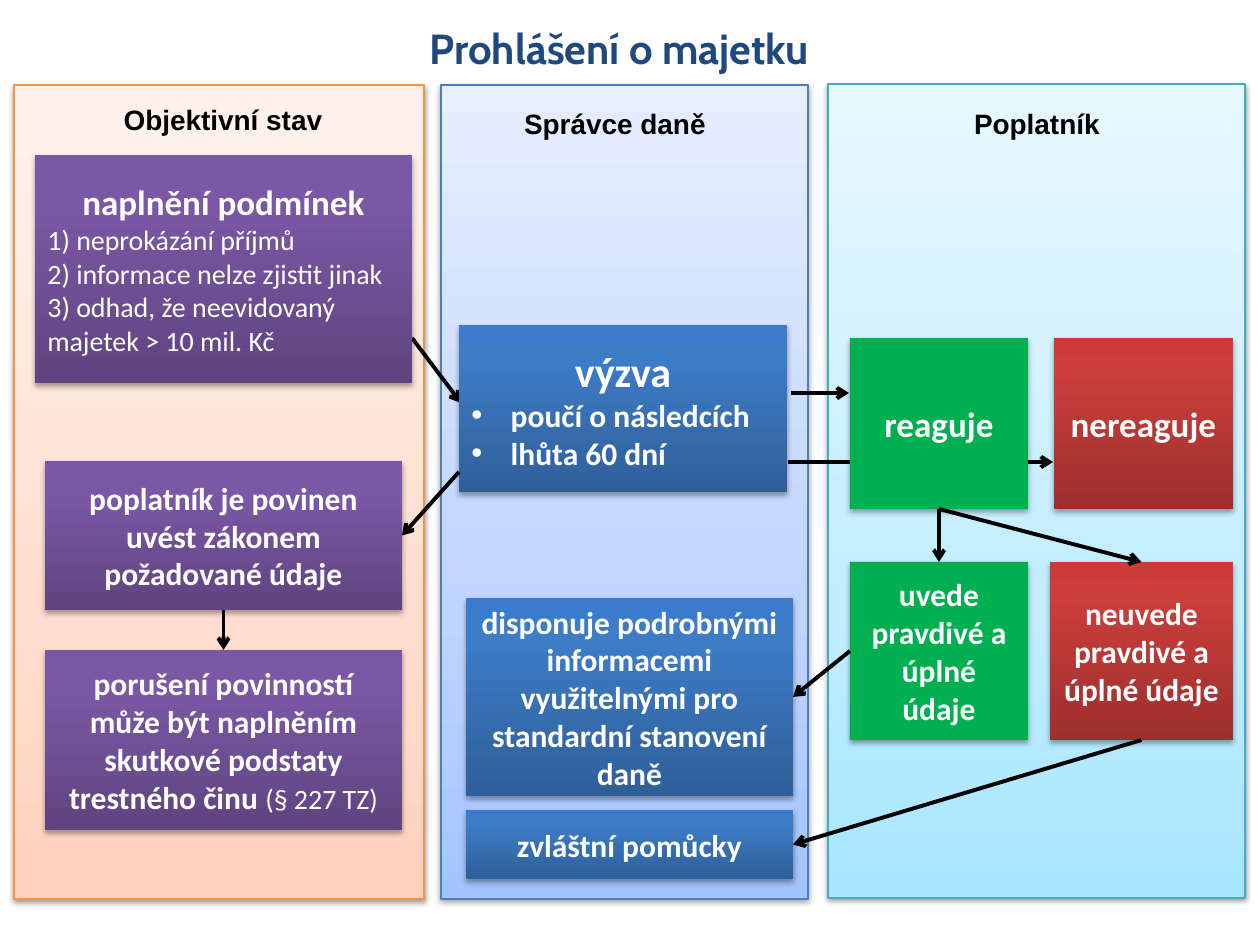
"""Build the slide on the declaration of assets as a three-lane flow chart."""
import lxml.etree
import pptx
import pptx.dml.color
import pptx.enum.shapes
import pptx.enum.text
import pptx.oxml.ns
import pptx.util

RGB = pptx.dml.color.RGBColor
ALIGN = pptx.enum.text.PP_ALIGN
RECT = pptx.enum.shapes.MSO_SHAPE.RECTANGLE
LINE = pptx.enum.shapes.MSO_CONNECTOR.STRAIGHT
qn = pptx.oxml.ns.qn
add = lxml.etree.SubElement
PX = 914400 / 126

BLACK = RGB(0, 0, 0)
WHITE = RGB(255, 255, 255)
NAVY = RGB(0x1F, 0x49, 0x7D)
GREEN = [RGB(0x00, 0xB0, 0x50)]
PURPLE = [RGB(0x5F, 0x44, 0x80), RGB(0x7B, 0x58, 0xA6), RGB(0x7C, 0x57, 0xA8)]
BLUE = [RGB(0x2F, 0x5F, 0x99), RGB(0x3D, 0x7C, 0xC7), RGB(0x3A, 0x7C, 0xCB)]
RED = [RGB(0x9C, 0x2F, 0x2D), RGB(0xCB, 0x3E, 0x3A), RGB(0xCE, 0x3B, 0x37)]
CYAN = [RGB(0xA7, 0xE6, 0xFF), RGB(0xC1, 0xED, 0xFF), RGB(0xE7, 0xF8, 0xFF)]
SKY = [RGB(0xA4, 0xC4, 0xFF), RGB(0xBF, 0xD4, 0xFF), RGB(0xE6, 0xEE, 0xFF)]
PEACH = [RGB(0xFF, 0xD2, 0xBD), RGB(0xFF, 0xDE, 0xD0), RGB(0xFF, 0xF2, 0xED)]
TEAL = RGB(0x46, 0xAA, 0xC5)
STEEL = RGB(0x4B, 0x7E, 0xBC)
ORANGE = RGB(0xF6, 0x92, 0x40)


def write(frame, text, size=18, bold=True, font="Calibri", color=WHITE,
          align=ALIGN.CENTER, bullet=False, join=False):
    para = frame.paragraphs[-1]
    if para.runs and not join:
        para = frame.add_paragraph()
    para.alignment = align
    run = para.add_run()
    run.text = text
    run.font.size = pptx.util.Pt(size)
    run.font.bold = bold
    run.font.name = font
    run.font.color.rgb = color
    if bullet:
        props = para._p.get_or_add_pPr()
        props.set("marL", "285750")
        props.set("indent", "-285750")
        add(props, qn("a:buFont"), typeface="Arial")
        add(props, qn("a:buChar"), char="•")


def block(place, colors, mid=80, edge=None, dist=23000, alpha=35):
    shape = slide.shapes.add_shape(RECT, *[round(n * PX) for n in place])
    fill = shape.fill
    if len(colors) == 1:
        fill.solid()
        fill.fore_color.rgb = colors[0]
    else:
        fill.gradient()
        fill.gradient_angle = 90
        stops = shape._element.spPr.find(".//" + qn("a:gsLst"))
        for stop in list(stops):
            stops.remove(stop)
        for spot, color in zip((0, mid, 100), colors):
            stop = add(stops, qn("a:gs"), pos=str(spot * 1000))
            add(stop, qn("a:srgbClr"), val=str(color))
    if edge:
        shape.line.color.rgb = edge
        shape.line.width = pptx.util.Pt(0.75)
    else:
        shape.line.fill.background()
    shape.shadow.inherit = False
    effect = shape._element.spPr.find(qn("a:effectLst"))
    shade = add(effect, qn("a:outerShdw"), blurRad="40000", dist=str(dist),
                dir="5400000", rotWithShape="0")
    tint = add(shade, qn("a:srgbClr"), val="000000")
    add(tint, qn("a:alpha"), val=str(alpha * 1000))
    return shape


deck = pptx.Presentation()
deck.slide_width = pptx.util.Inches(10)
deck.slide_height = pptx.util.Inches(7.5)
slide = deck.slides.add_slide(deck.slide_layouts[6])

for place, colors, edge in [
    ((828, 84, 417, 814), CYAN, TEAL),
    ((441, 85, 367, 814), SKY, STEEL),
    ((14, 85, 410, 814), PEACH, ORANGE),
]:
    block(place, colors, mid=35, edge=edge, dist=20000, alpha=38)

for text, place, size, font, color in [
    ("Prohlášení o majetku", (184, 16, 871, 63), 24, "Cabin", NAVY),
    ("Objektivní stav", (64, 96, 318, 47), 16, "Arial", BLACK),
    ("Správce daně", (456, 100, 318, 47), 16, "Arial", BLACK),
    ("Poplatník", (878, 100, 318, 47), 16, "Arial", BLACK),
]:
    label = slide.shapes.add_textbox(*[round(n * PX) for n in place])
    label.text_frame.word_wrap = True
    write(label.text_frame, text, size=size, font=font, color=color)

wires = []
for ends in [(788, 462, 1053, 462), (791, 393, 849, 393), (412, 338, 461, 403)]:
    wires.append(slide.shapes.add_connector(LINE, *[round(n * PX) for n in ends]))

cards = {}
for name, place, colors, text, size in [
    ("terms", (35, 155, 377, 228), PURPLE, "naplnění podmínek", 20),
    ("call", (459, 325, 328, 167), BLUE, "výzva", 24),
    ("mute", (1054, 338, 179, 171), RED, "nereaguje", 20),
    ("true", (850, 562, 178, 178), GREEN, "uvede pravdivé a úplné údaje", 18),
    ("false", (1050, 562, 183, 178), RED, "neuvede pravdivé a úplné údaje", 18),
    ("duty", (45, 461, 357, 149), PURPLE,
     "poplatník je povinen uvést zákonem požadované údaje", 18),
    ("reply", (850, 338, 178, 171), GREEN, "reaguje", 20),
    ("facts", (466, 598, 327, 198), BLUE,
     "disponuje podrobnými informacemi využitelnými pro standardní stanovení daně", 18),
    ("crime", (45, 650, 357, 180), PURPLE,
     "porušení povinností může být naplněním skutkové podstaty trestného činu ", 18),
    ("tools", (466, 810, 327, 69), BLUE, "zvláštní pomůcky", 18),
]:
    cards[name] = block(place, colors)
    write(cards[name].text_frame, text, size=size)

for text in ["1) neprokázání příjmů", "2) informace nelze zjistit jinak",
             "3) odhad, že neevidovaný majetek > 10 mil. Kč"]:
    write(cards["terms"].text_frame, text, size=16, bold=False, align=ALIGN.LEFT)
for text in ["poučí o následcích", "lhůta 60 dní"]:
    write(cards["call"].text_frame, text, align=ALIGN.LEFT, bullet=True)
write(cards["crime"].text_frame, "(§ 227 TZ)", size=16, bold=False, join=True)

for start, out, end, into in [
    ("false", 2, "tools", 3),
    ("reply", 2, "false", 0),
    ("reply", 2, "true", 0),
    ("true", 1, "facts", 3),
    ("duty", 2, "crime", 0),
]:
    wire = slide.shapes.add_connector(LINE, 0, 0, 0, 0)
    wire.begin_connect(cards[start], out)
    wire.end_connect(cards[end], into)
    wires.append(wire)

wire = slide.shapes.add_connector(LINE, round(459 * PX), round(472 * PX), 0, 0)
wire.end_connect(cards["duty"], 3)
wires.append(wire)

for wire in wires:
    wire.line.color.rgb = BLACK
    wire.line.width = pptx.util.Pt(2.25)
    add(wire.line._get_or_add_ln(), qn("a:tailEnd"), type="arrow")
    add(wire._element.spPr, qn("a:effectLst"))

deck.save("out.pptx")
